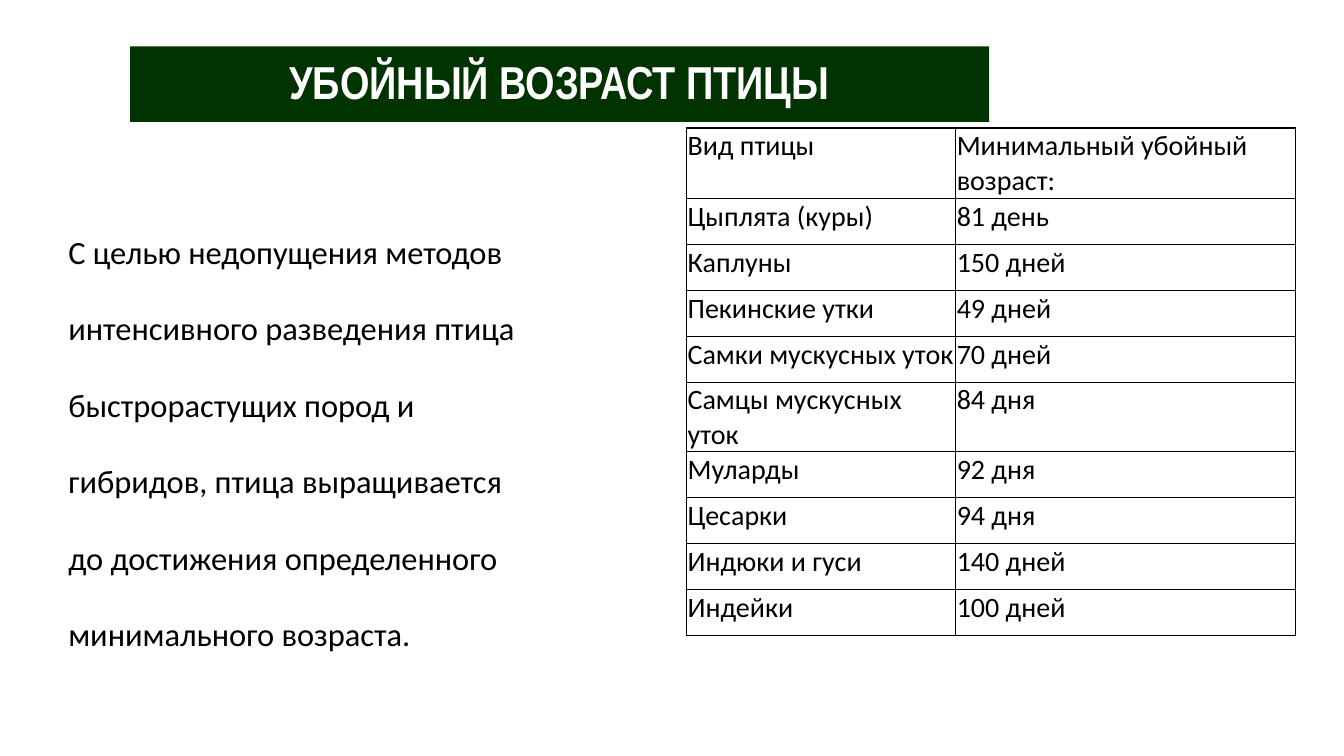
from dataclasses import dataclass

from pptx import Presentation
from pptx import util as u
from pptx.dml.color import RGBColor
from pptx.enum import text
from pptx.oxml import parse_xml
from pptx.oxml.ns import nsdecls


@dataclass(frozen=True)
class Theme:
    banner: str = "003300"
    light: str = "FFFFFF"
    ink: str = "000000"
    title_font: str = "Arial Narrow"
    body_font: str = "Calibri"
    title_size: int = 33
    body_size: int = 40
    table_size: int = 20
    border: int = 1


class SlideBuilder:
    def __init__(self, prs, theme):
        self.theme = theme
        self.s = prs.slides.add_slide(prs.slide_layouts.get_by_name("Title Only"))

    @staticmethod
    def set_attrs(target, values):
        for name, value in values.items():
            setattr(target, name, value)

    def style(self, r, font, size, color, bold=False):
        self.set_attrs(r.font, {"name": font, "size": u.Pt(size), "bold": bold})
        r.font.color.rgb = RGBColor.from_string(color)

    def title(self, box, wording):
        t, sp = self.theme, self.s.shapes.title
        self.set_attrs(sp, dict(zip(("left", "top", "width", "height"),
                                    map(u.Inches, box))))
        sp.fill.solid()
        sp.fill.fore_color.rgb = RGBColor.from_string(t.banner)
        tf = sp.text_frame
        self.set_attrs(tf, {"word_wrap": True,
                            "auto_size": text.MSO_AUTO_SIZE.NONE,
                            "vertical_anchor": text.MSO_ANCHOR.MIDDLE})
        p = tf.paragraphs[0]
        self.set_attrs(p, {"alignment": text.PP_ALIGN.CENTER, "line_spacing": 0.9})
        r = p.add_run()
        r.text = wording
        self.style(r, t.title_font, t.title_size, t.light, bold=True)

    def lowered_text(self, box, lines):
        """Text set as subscript, with a line break between lines."""
        t = self.theme
        tf = self.s.shapes.add_textbox(*map(u.Inches, box)).text_frame
        self.set_attrs(tf, {"word_wrap": True,
                            "auto_size": text.MSO_AUTO_SIZE.SHAPE_TO_FIT_TEXT})
        p = tf.paragraphs[0]
        for i, line in enumerate(lines):
            if i:
                p.add_line_break()
            r = p.add_run()
            r.text = line
            self.style(r, t.body_font, t.body_size, t.ink)
            r.font._element.set("baseline", "-25000")

    def borders(self, cell):
        t = self.theme
        tc_pr = cell._tc.get_or_add_tcPr()
        for i, side in enumerate(("lnL", "lnR", "lnT", "lnB")):
            tc_pr.insert(i, parse_xml(
                f'<a:{side} {nsdecls("a")} w="{u.Pt(t.border)}"><a:solidFill>'
                f'<a:srgbClr val="{t.ink}"/></a:solidFill></a:{side}>'))

    def table(self, left, top, widths, heights, rows):
        t = self.theme
        box = (left, top, sum(widths), sum(heights))
        table = self.s.shapes.add_table(len(rows), len(widths),
                                        *map(u.Inches, box)).table
        self.set_attrs(table, {"first_row": False, "horz_banding": False})
        for column, width in zip(table.columns, widths):
            column.width = u.Inches(width)
        for row, height, values in zip(table.rows, heights, rows):
            row.height = u.Inches(height)
            for cell, value in zip(row.cells, values):
                inset = u.Inches(0.01)
                self.set_attrs(cell, {"margin_left": inset, "margin_top": inset,
                                      "margin_right": inset, "margin_bottom": 0})
                cell.fill.background()
                self.borders(cell)
                r = cell.text_frame.paragraphs[0].add_run()
                r.text = value
                self.style(r, t.body_font, t.table_size, t.ink)


AGES = [
    ("Вид птицы", "Минимальный убойный возраст:"),
    ("Цыплята (куры)", "81 день"),
    ("Каплуны", "150 дней"),
    ("Пекинские утки", "49 дней"),
    ("Самки мускусных уток", "70 дней"),
    ("Самцы мускусных уток", "84 дня"),
    ("Муларды", "92 дня"),
    ("Цесарки", "94 дня"),
    ("Индюки и гуси", "140 дней"),
    ("Индейки", "100 дней"),
]
REASON = [
    "С целью недопущения методов интенсивного разведения птица",
    "быстрорастущих пород и гибридов, птица выращивается до достижения "
    "определенного минимального возраста.",
]


def main():
    prs = Presentation()
    prs.slide_width, prs.slide_height = u.Inches(13.33), u.Inches(7.5)
    slide = SlideBuilder(prs, Theme())

    # Banner title
    slide.title((1.29, 0.46, 8.52, 0.75), "УБОЙНЫЙ ВОЗРАСТ ПТИЦЫ")

    # Slaughter ages: a tall header row, then equal rows
    birds = len(AGES) - 1
    slide.table(6.81, 1.27, (2.67, 3.37), [0.7] + [4.1 / birds] * birds, AGES)

    # Explanation on the left
    slide.lowered_text((0.58, 1.88, 4.77, 4.36), REASON)

    prs.save("out.pptx")


if __name__ == "__main__":
    main()
